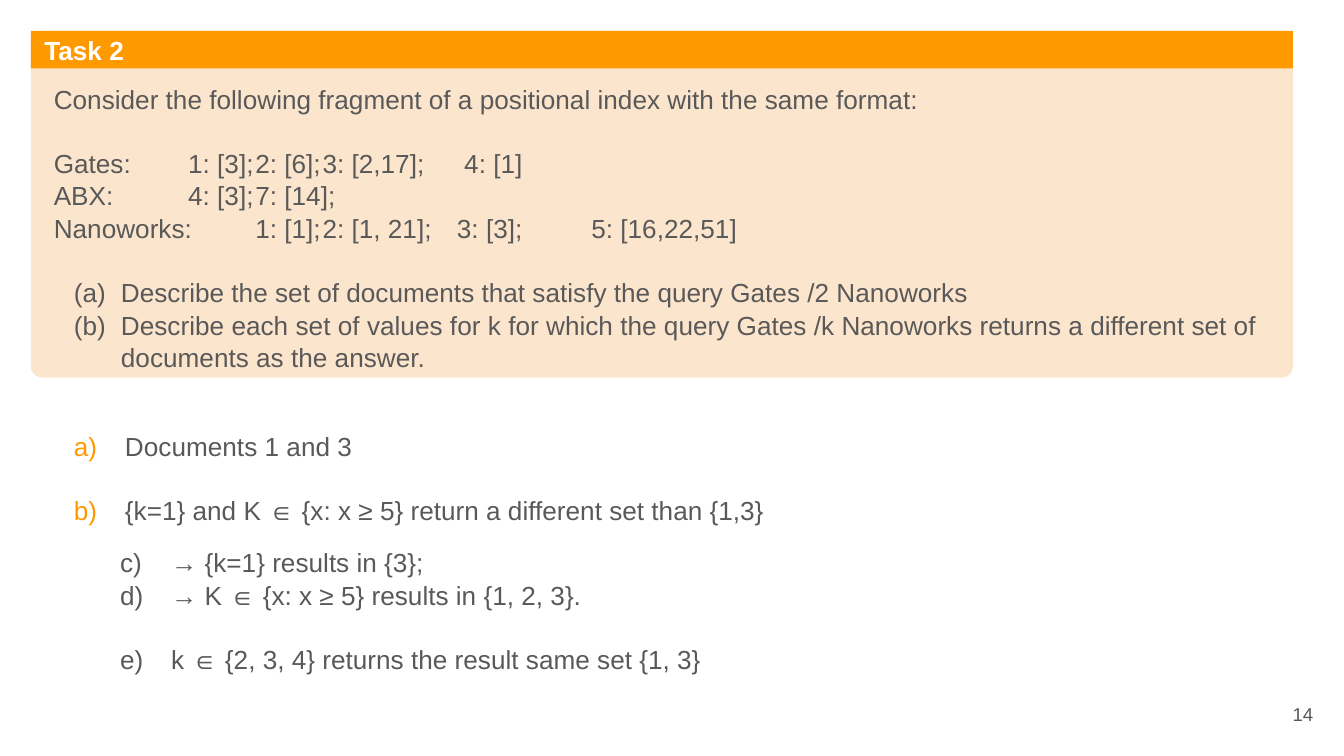
from dataclasses import dataclass

from lxml.etree import SubElement
from pptx import Presentation
from pptx.dml.color import RGBColor
from pptx.enum.shapes import MSO_SHAPE
from pptx.enum.text import MSO_ANCHOR, MSO_AUTO_SIZE, PP_ALIGN
from pptx.oxml.ns import qn
from pptx.util import Pt


@dataclass(frozen=True)
class Theme:
    font: str = "Arial"
    text: str = "595959"
    accent: str = "FF9900"
    panel: str = "FCE5CD"
    inverse: str = "FFFFFF"
    body_size: float = 14
    number_size: float = 10
    line_spacing: float = 1.04
    inset: float = 7.2
    blank_line: float = 16.8
    short_gap: float = 10.8
    tab_step: float = 72
    tab_count: int = 5


@dataclass(frozen=True)
class Area:
    left: float
    top: float
    width: float
    height: float


@dataclass(frozen=True)
class Line:
    text: str
    before: float = 0
    margin: float = 0
    hanging: float = 0
    numbering: str = ""
    number_color: str = ""


THEME = Theme()
PANEL = Area(16.56, 16.56, 676.08, 185.76)
TITLE_BAR = Area(16.56, 16.56, 676.08, 20.16)
QUESTION_AREA = Area(21.6, 36.72, 659.52, 30.96)
ANSWER_AREA = Area(21.6, 222.48, 671.04, 150.48)
NUMBER_AREA = Area(667.44, 367.2, 43.2, 30.96)


def subquestion(text: str, before: float = 0) -> Line:
    return Line(text, before, 36, 25.2, "alphaLcParenBoth", THEME.text)


def answer(text: str, before: float = 0) -> Line:
    return Line(text, before, 38.16, 27.36, "alphaLcParenR", THEME.accent)


def detail(text: str, before: float = 0) -> Line:
    return Line(text, before, 62.9, 27.36, "alphaLcParenR", THEME.text)


QUESTION = [
    Line("Consider the following fragment of a positional index with the same format:"),
    Line("Gates:\t1: [3];\t2: [6];\t3: [2,17];\t 4: [1]", THEME.blank_line),
    Line("ABX:\t\t4: [3];\t7: [14];"),
    Line("Nanoworks:\t1: [1];\t2: [1, 21];\t3: [3];\t\t5: [16,22,51]"),
    subquestion("Describe the set of documents that satisfy the query Gates /2 Nanoworks",
                THEME.blank_line),
    subquestion("Describe each set of values for k for which the query Gates /k Nanoworks "
                "returns a different set of documents as the answer."),
]
ANSWERS = [
    answer("Documents 1 and 3"),
    answer("{k=1} and K ∈ {x: x ≥ 5} return a different set than {1,3}", THEME.blank_line),
    detail("→ {k=1} results in {3};", THEME.short_gap),
    detail("→ K ∈ {x: x ≥ 5} results in {1, 2, 3}."),
    detail("k ∈ {2, 3, 4} returns the result same set {1, 3}", THEME.blank_line),
]


def place(shape, area: Area) -> None:
    shape.left, shape.top = Pt(area.left), Pt(area.top)
    shape.width, shape.height = Pt(area.width), Pt(area.height)


def fill(shape, color: str) -> None:
    shape.fill.solid()
    shape.fill.fore_color.rgb = RGBColor.from_string(color)


def prepare_frame(shape, anchor: MSO_ANCHOR):
    frame = shape.text_frame
    frame.word_wrap = True
    frame.auto_size = MSO_AUTO_SIZE.NONE
    frame.vertical_anchor = anchor
    frame.margin_left = frame.margin_right = Pt(THEME.inset)
    frame.margin_top = frame.margin_bottom = Pt(THEME.inset)
    return frame


def set_font(para, size: float, color: str, bold: bool = False) -> None:
    para.font.name = THEME.font
    para.font.size = Pt(size)
    para.font.bold = bold
    para.font.color.rgb = RGBColor.from_string(color)


def set_layout(para, line: Line) -> None:
    properties = para._p.get_or_add_pPr()
    properties.set("marL", str(Pt(line.margin)))
    properties.set("indent", str(-Pt(line.hanging)))
    if line.numbering:
        color = SubElement(properties, qn("a:buClr"))
        SubElement(color, qn("a:srgbClr"), val=line.number_color)
        SubElement(properties, qn("a:buFont"), typeface=THEME.font)
        SubElement(properties, qn("a:buAutoNum"), type=line.numbering)
    else:
        SubElement(properties, qn("a:buNone"))
    if "\t" in line.text:
        tabs = SubElement(properties, qn("a:tabLst"))
        for index in range(1, THEME.tab_count + 1):
            SubElement(tabs, qn("a:tab"), pos=str(Pt(index * THEME.tab_step)), algn="l")


def write_list(shape, area: Area, lines: list[Line]) -> None:
    place(shape, area)
    frame = prepare_frame(shape, MSO_ANCHOR.TOP)
    for index, line in enumerate(lines):
        para = frame.add_paragraph() if index else frame.paragraphs[0]
        para.text = line.text
        para.alignment = PP_ALIGN.JUSTIFY
        para.line_spacing = THEME.line_spacing
        para.space_before = Pt(line.before)
        para.space_after = Pt(0)
        set_layout(para, line)
        set_font(para, THEME.body_size, THEME.text)


def add_panel(page) -> None:
    panel = page.shapes.add_shape(MSO_SHAPE.ROUNDED_RECTANGLE, 0, 0, 0, 0)
    place(panel, PANEL)
    panel.adjustments[0] = 0.033
    panel.shadow.inherit = False
    panel.line.fill.background()
    fill(panel, THEME.panel)
    panel.element.getparent().insert(2, panel.element)


def write_title(title) -> None:
    place(title, TITLE_BAR)
    fill(title, THEME.accent)
    frame = prepare_frame(title, MSO_ANCHOR.MIDDLE)
    frame.margin_top = frame.margin_bottom = 0
    para = frame.paragraphs[0]
    para.text = "Task 2"
    para.alignment = PP_ALIGN.LEFT
    set_font(para, THEME.body_size, THEME.inverse, bold=True)


def add_page_number(page) -> None:
    box = page.shapes.add_textbox(0, 0, 0, 0)
    place(box, NUMBER_AREA)
    para = prepare_frame(box, MSO_ANCHOR.MIDDLE).paragraphs[0]
    para.text = "14"
    para.alignment = PP_ALIGN.RIGHT
    set_font(para, THEME.number_size, THEME.text)


def main() -> None:
    deck = Presentation()
    deck.slide_width, deck.slide_height = Pt(720), Pt(405)
    page = deck.slides.add_slide(deck.slide_layouts.get_by_name("Two Content"))
    title, question_box, answer_box = page.placeholders
    add_panel(page)
    write_title(title)
    write_list(question_box, QUESTION_AREA, QUESTION)
    write_list(answer_box, ANSWER_AREA, ANSWERS)
    add_page_number(page)
    deck.save("out.pptx")


if __name__ == "__main__":
    main()
